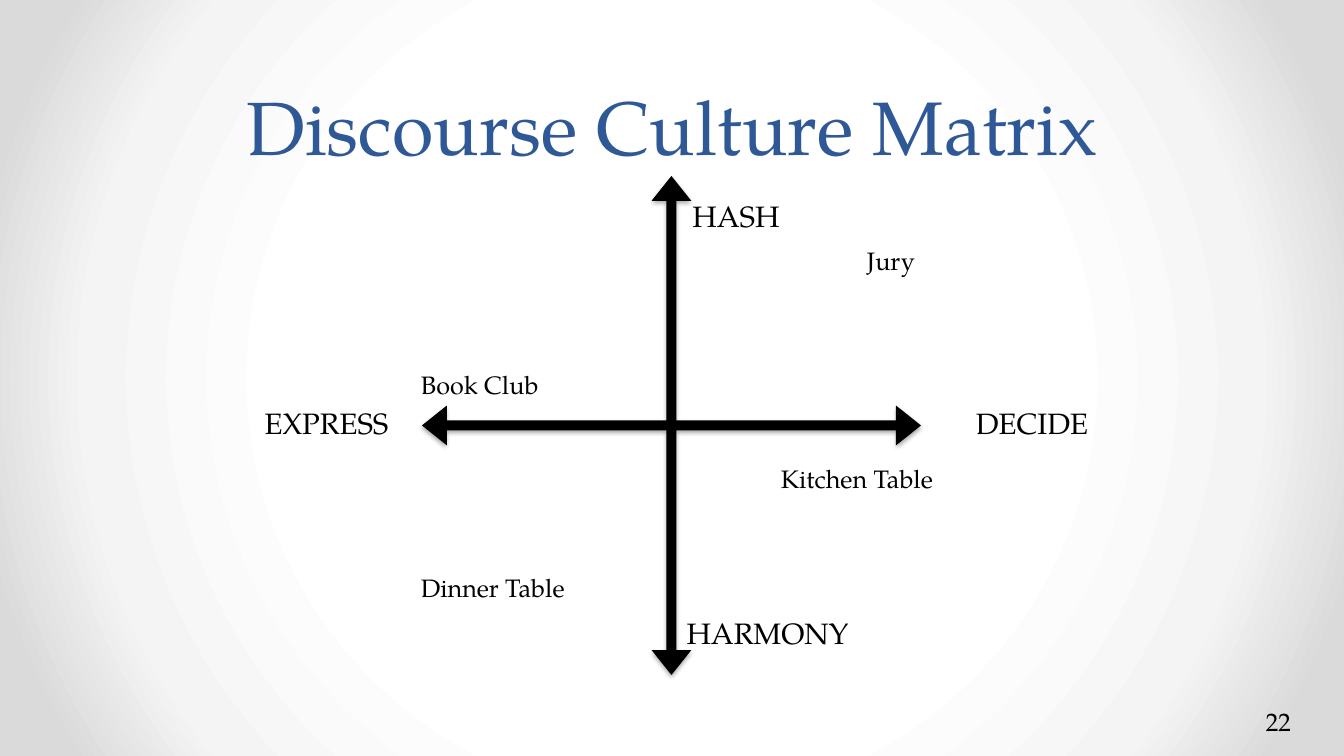
from pptx import Presentation
from pptx.dml.color import RGBColor
from pptx.enum.shapes import MSO_SHAPE
from pptx.enum.text import MSO_ANCHOR, PP_ALIGN
from pptx.oxml import parse_xml
from pptx.oxml.ns import nsdecls, qn
from pptx.util import Pt

PX = 914400 / 100.8
FONT = "TeX Gyre Pagella"
COLORS = {"title": "2F5897", "ink": "000000",
          "center": "FFFFFF", "ring": "F4F4F4", "edge": "DADADA"}
QUAD_ARROW = MSO_SHAPE.QUAD_ARROW
LEFT, CENTER = PP_ALIGN.LEFT, PP_ALIGN.CENTER
TOP, MIDDLE, BOTTOM = MSO_ANCHOR.TOP, MSO_ANCHOR.MIDDLE, MSO_ANCHOR.BOTTOM


def px(n):
    return round(n * PX)


prs = Presentation()
prs.slide_width, prs.slide_height = px(1344), px(756)
s = prs.slides.add_slide(prs.slide_layouts[6])


def add_text(text, box, size=18, color="ink", align=LEFT, anchor=TOP,
             spacing=None, after=None, inset=None):
    tf = s.shapes.add_textbox(*map(px, box)).text_frame
    tf.word_wrap = True
    tf.vertical_anchor = anchor
    if inset is not None:
        tf.margin_left = tf.margin_right = px(inset)
        tf.margin_top = tf.margin_bottom = px(inset)
    p = tf.paragraphs[0]
    p.alignment, p.line_spacing, p.space_after = align, spacing, after
    r = p.add_run()
    r.text = text
    r.font.name, r.font.size = FONT, Pt(size)
    r.font.color.rgb = RGBColor.from_string(COLORS[color])


# Background: radial gradient from the centre
stops = "".join(
    f'<a:gs pos="{pos * 1000}"><a:srgbClr val="{COLORS[name]}"/></a:gs>'
    for pos, name in [(50, "center"), (76, "ring"), (92, "edge")])
s.element.find(qn("p:cSld")).insert(0, parse_xml(
    f'<p:bg {nsdecls("p", "a")}><p:bgPr><a:gradFill rotWithShape="1">'
    f'<a:gsLst>{stops}</a:gsLst><a:path path="circle">'
    '<a:fillToRect l="50000" t="50000" r="50000" b="50000"/></a:path>'
    '</a:gradFill><a:effectLst/></p:bgPr></p:bg>'))

# Title
add_text("Discourse Culture Matrix", (67, 0, 1210, 176), size=54, color="title",
         align=CENTER, anchor=BOTTOM, spacing=Pt(58))

# Axes: one four-way arrow with a soft shadow
axes = s.shapes.add_shape(QUAD_ARROW, px(422), px(176), px(499), px(499))
for i, ratio in enumerate((0.02, 0.04, 0.05)):
    axes.adjustments[i] = ratio
axes.fill.solid()
axes.fill.fore_color.rgb = RGBColor.from_string(COLORS["ink"])
axes.line.fill.background()
axes.shadow.inherit = False
axes.element.spPr.find(qn("a:effectLst")).append(parse_xml(
    f'<a:outerShdw {nsdecls("a")} blurRad="{Pt(3.1)}" dist="{Pt(1.8)}" '
    f'dir="5400000" rotWithShape="0"><a:srgbClr val="{COLORS["ink"]}">'
    '<a:alpha val="35000"/></a:srgbClr></a:outerShdw>'))

# Axis ends
for text, box in [("EXPRESS", (230, 394, 193, 62)),
                  ("HASH", (640, 181, 192, 74)),
                  ("DECIDE", (935, 397, 194, 56)),
                  ("HARMONY", (639, 598, 257, 74))]:
    add_text(text, box, size=21, align=CENTER, anchor=MIDDLE,
             spacing=0.9, after=Pt(7.35), inset=9)

# Examples in the quadrants
for text, x, y, w in [("Jury", 857, 240, 148),
                      ("Book Club", 411, 364, 148),
                      ("Kitchen Table", 771, 458, 206),
                      ("Dinner Table", 411, 567, 172)]:
    add_text(text, (x, y, w, 40))

# Page number
add_text("22", (1256, 701, 83, 40))

prs.save("out.pptx")
